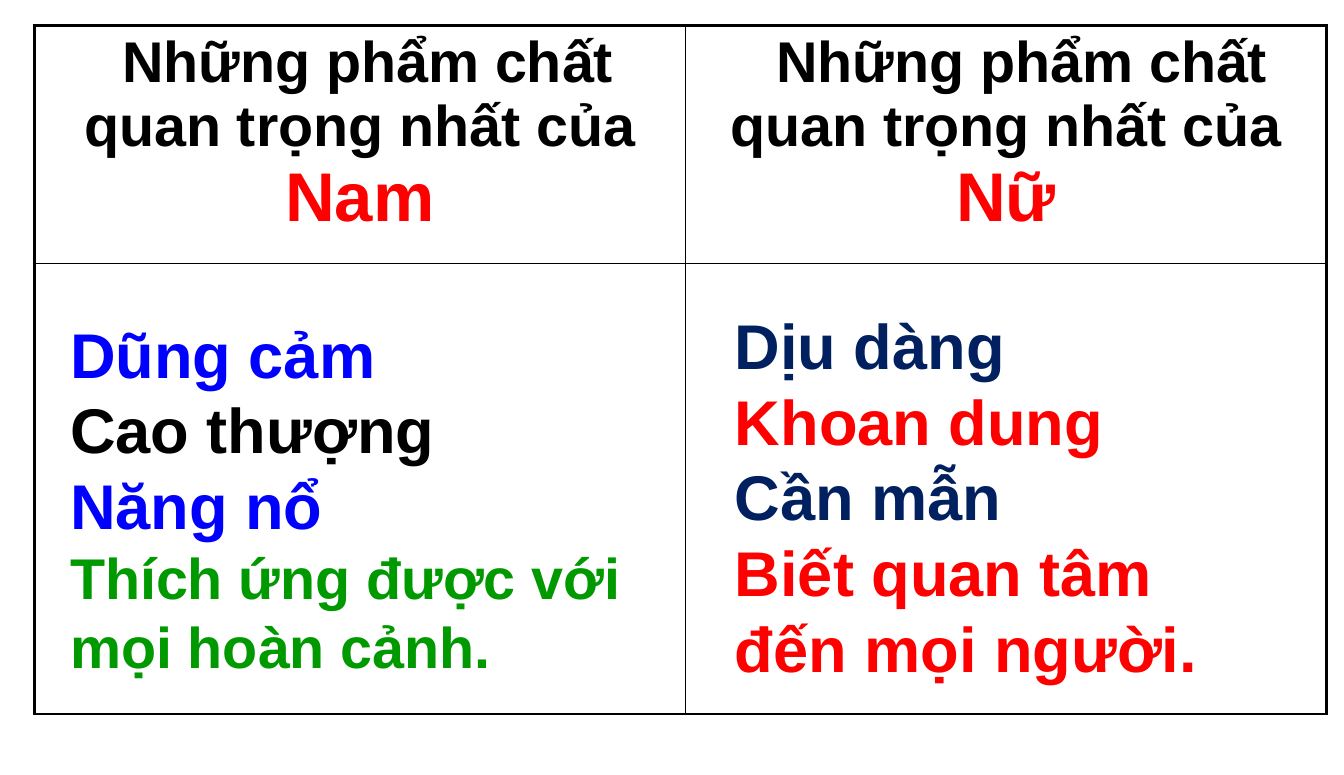
from pptx import Presentation
from pptx import util as u
from pptx.dml.color import RGBColor
from pptx.enum import text
from pptx.oxml.ns import qn
from lxml import etree

COLORS = {
    "black": "000000",
    "red": "FF0000",
    "blue": "0000FF",
    "navy": "002060",
    "green": "009900",
}


class QualitiesSlide:
    """Hold the text style and the current page, and draw its elements."""

    font = "Arial"

    def __init__(self, deck):
        self.page = deck.slides.add_slide(deck.slide_layouts[6])

    def style(self, span, size, color):
        span.font.name = self.font
        span.font.bold = True
        span.font.size = u.Pt(size)
        span.font.color.rgb = RGBColor.from_string(COLORS[color])

    def border(self, cell, side, width):
        line = etree.SubElement(cell._tc.get_or_add_tcPr(), qn(f"a:ln{side}"), w=str(u.Pt(width)))
        fill = etree.SubElement(line, qn("a:solidFill"))
        etree.SubElement(fill, qn("a:srgbClr"), val=COLORS["black"])

    def heading(self, cell, subject, indent):
        para = cell.text_frame.paragraphs[0]
        para.alignment = text.PP_ALIGN.CENTER
        para._p.get_or_add_pPr().set("indent", str(u.Pt(indent)))
        for words, size, color in (
            ("Những phẩm chất quan trọng nhất của ", 40, "black"),
            (subject, 48, "red"),
        ):
            span = para.add_run()
            span.text = words
            self.style(span, size, color)

    def table(self, left, top, widths, heights, headings):
        rows, columns = len(heights), len(widths)
        frame = self.page.shapes.add_table(
            rows, columns, u.Inches(left), u.Inches(top),
            u.Inches(sum(widths)), u.Inches(sum(heights)))
        grid = frame.table
        grid.first_row = grid.horz_banding = False
        for column, width in zip(grid.columns, widths):
            column.width = u.Inches(width)
        for r, height in enumerate(heights):
            grid.rows[r].height = u.Inches(height)
            for c in range(columns):
                cell = grid.cell(r, c)
                cell.margin_left = cell.margin_right = u.Inches(0.13)
                cell.margin_top = cell.margin_bottom = u.Inches(0.05)
                outer = {"L": c == 0, "R": c == columns - 1, "T": r == 0, "B": r == rows - 1}
                for side, is_outer in outer.items():
                    self.border(cell, side, 2.25 if is_outer else 1)
                cell.fill.background()
        for cell, (subject, indent) in zip(grid.rows[0].cells, headings):
            self.heading(cell, subject, indent)

    def qualities(self, left, top, width, height, lines):
        box = self.page.shapes.add_textbox(*map(u.Inches, (left, top, width, height)))
        frame = box.text_frame
        frame.word_wrap = True
        frame.vertical_anchor = text.MSO_ANCHOR.MIDDLE
        para = frame.paragraphs[0]
        para.text = "\v".join(words for words, _, _ in lines)
        for span, (_, size, color) in zip(para.runs, lines):
            self.style(span, size, color)


def main():
    deck = Presentation()
    deck.slide_width, deck.slide_height = u.Inches(13), u.Inches(7.5)
    slide = QualitiesSlide(deck)
    slide.table(0.33, 0.25, (6.3, 6.2), (2.3, 4.36), (("Nam", 11), ("Nữ", 22)))
    slide.qualities(0.58, 2.66, 5.56, 4.31, (
        ("Dũng cảm", 44, "blue"),
        ("Cao thượng", 44, "black"),
        ("Năng nổ", 44, "blue"),
        ("Thích ứng được với mọi hoàn cảnh.", 40, "green"),
    ))
    slide.qualities(7.01, 2.67, 5.24, 4.25, (
        ("Dịu dàng", 44, "navy"),
        ("Khoan dung", 44, "red"),
        ("Cần mẫn", 44, "navy"),
        ("Biết quan tâm đến mọi người.", 44, "red"),
    ))
    deck.save("out.pptx")


if __name__ == "__main__":
    main()
